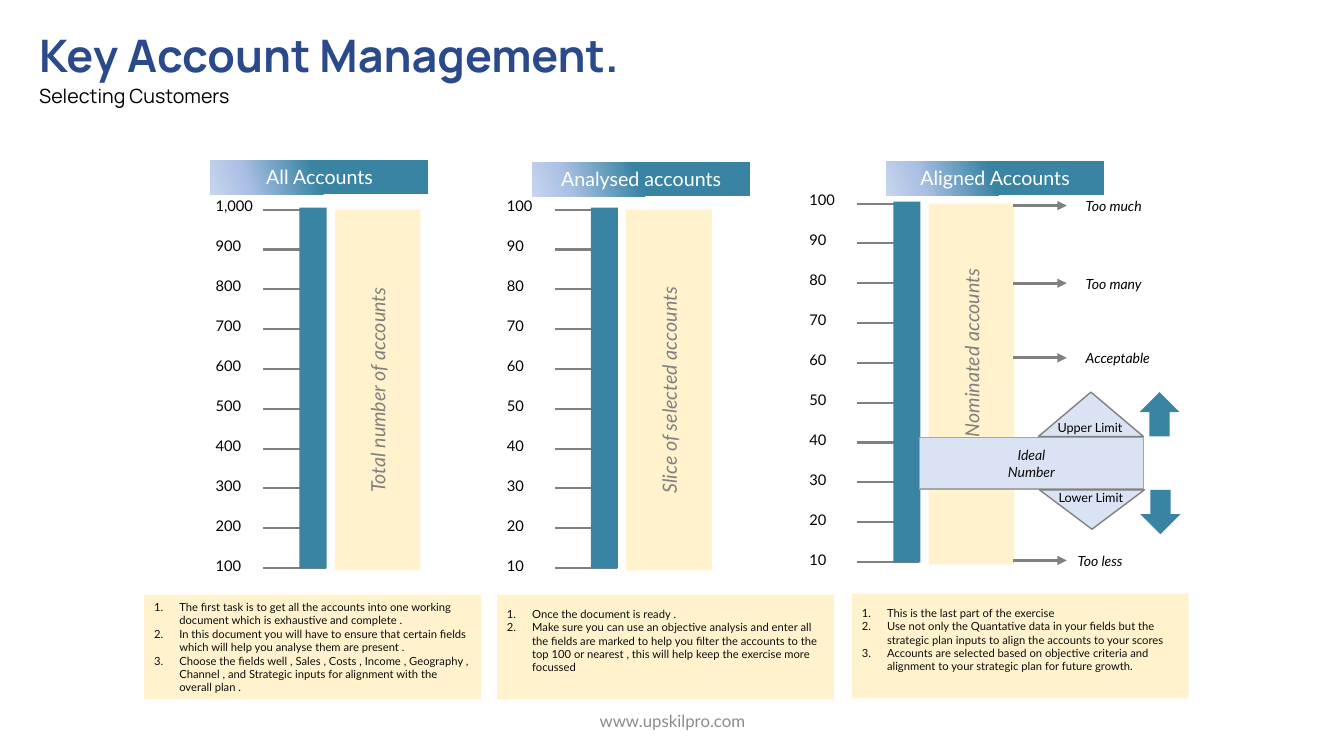
from dataclasses import dataclass

from lxml import etree
from pptx import Presentation
from pptx.dml.color import RGBColor
from pptx.enum.shapes import MSO_CONNECTOR, MSO_SHAPE
from pptx.enum.text import MSO_ANCHOR, PP_ALIGN
from pptx.oxml.ns import qn
from pptx.util import Inches, Pt

LINE = MSO_CONNECTOR.STRAIGHT
RECT, PEAK, RISE = MSO_SHAPE.RECTANGLE, MSO_SHAPE.ISOSCELES_TRIANGLE, MSO_SHAPE.UP_ARROW
TOP, MIDDLE = MSO_ANCHOR.TOP, MSO_ANCHOR.MIDDLE
LEFT, CENTER = PP_ALIGN.LEFT, PP_ALIGN.CENTER


@dataclass(frozen=True)
class Theme:
    face: str = "Lato"
    display: str = "Manrope"
    navy: str = "2A4A8B"
    teal: str = "3984A3"
    cream: str = "FFF2CC"
    pale: str = "DAE3F3"
    gray: str = "808080"
    edge: str = "A6A6A6"
    foot: str = "8C8C8C"
    ink: str = "0D0D0D"
    black: str = "000000"
    white: str = "FFFFFF"
    fade: tuple = ((0, "3984A3"), (51, "3984A3"), (83, "ABC0E4"), (100, "C7D5ED"))
    title: float = 32
    head: float = 14
    site: float = 12
    mark: float = 10.5
    note: float = 10
    limit: float = 9
    step: float = 8


T = Theme()


def style(para, size, color, face=T.face, bold=False, italic=False):
    font = para.font
    font.size, font.name = Pt(size), face
    font.bold, font.italic = bold, italic
    font.color.rgb = RGBColor.from_string(color)


def write(shape, lines, size, color, align=LEFT, anchor=TOP, italic=False):
    frame = shape.text_frame
    frame.word_wrap = True
    frame.vertical_anchor = anchor
    frame.text = "\n".join(lines)
    for para in frame.paragraphs:
        para.alignment = align
        style(para, size, color, italic=italic)
    return frame


def label(shapes, box, text, size, color=T.black, **look):
    area = shapes.add_textbox(*map(Inches, box))
    return write(area, [text], size, color, **look)


def block(shapes, kind, box, fill, line=None):
    shape = shapes.add_shape(kind, *map(Inches, box))
    shape.shadow.inherit = False
    shape.fill.solid()
    shape.fill.fore_color.rgb = RGBColor.from_string(fill)
    if line:
        shape.line.color.rgb = RGBColor.from_string(line)
        shape.line.width = Pt(1)
    else:
        shape.line.fill.background()
    return shape


def rule(shapes, x, y, length, width, arrow=False):
    line = shapes.add_connector(LINE, Inches(x), Inches(y), Inches(x + length), Inches(y))
    line.line.color.rgb = RGBColor.from_string(T.gray)
    line.line.width = Pt(width)
    if arrow:
        etree.SubElement(line.line._get_or_add_ln(), qn("a:tailEnd"), type="triangle")
    etree.SubElement(line._element.spPr, qn("a:effectLst"))


def banner(shapes, x, y, text):
    shape = block(shapes, RECT, (x, y, 2.16, 0.34), T.teal)
    shape.fill.gradient()
    shape.fill.gradient_angle = 200
    stops = shape._element.spPr.find(".//" + qn("a:gsLst"))
    for old in list(stops):
        stops.remove(old)
    for place, color in T.fade:
        stop = etree.SubElement(stops, qn("a:gs"), pos=str(place * 1000))
        etree.SubElement(stop, qn("a:srgbClr"), val=color)
    write(shape, [text], T.head, T.white, CENTER)


def gauge(shapes, x, y, marks, text, indent=0):
    """Scale of ten marks beside a bar and a captioned column."""
    for row, mark in enumerate(marks):
        rule(shapes, x + 0.57, y + 0.02 + row * 0.395, 0.62, 1.5)
        label(shapes, (x, y - 0.16 + row * 0.397, 0.85, 0.29), mark, T.mark)
    column = block(shapes, RECT, (x + 1.28, y + 0.02, 0.85, 3.58), T.cream)
    frame = write(column, [text], T.head, T.gray, CENTER, MIDDLE, True)
    frame._txBody.bodyPr.set("vert", "vert270")
    frame.paragraphs[0]._p.get_or_add_pPr().set("marL", str(Inches(indent)))
    block(shapes, RECT, (x + 0.93, y, 0.27, 3.58), T.teal)


def verdicts(shapes, x, y):
    rows = (("Too much", 0, 0.62), ("Too many", 0.77, 0.62),
            ("Acceptable", 1.51, 0.62), ("Too less", 3.52, 0.54))
    for text, drop, shift in rows:
        rule(shapes, x, y + drop, 0.53, 2.25, True)
        label(shapes, (x + shift, y + drop - 0.13, 1.12, 0.27), text, T.note, italic=True)


def target(shapes, x, y):
    """Ideal band with its upper and lower limits."""
    band = block(shapes, RECT, (x, y, 2.22, 0.51), T.pale, T.edge)
    write(band, ["Ideal", "Number"], T.note, T.ink, CENTER, MIDDLE, True)
    limits = (("Upper Limit", -0.45, 0.44, -0.22, 0, 1.18),
              ("Lower Limit", 0.52, 0.39, 0.47, 180, 1.19))
    for text, top, tall, drop, turn, shift in limits:
        peak = block(shapes, PEAK, (x + shift, y + top, 1.04, tall), T.pale, T.gray)
        arrow = block(shapes, RISE, (x + shift + 1, y + top, 0.4, 0.44), T.teal)
        peak.rotation = arrow.rotation = turn
        label(shapes, (x + shift + 0.09, y + drop, 0.85, 0.25), text, T.limit)


def steps(shapes, x, y, lines, below):
    shape = block(shapes, RECT, (x, y, 3.34, 1.04), T.cream)
    frame = write(shape, lines, T.step, T.ink, anchor=MIDDLE)
    frame.margin_bottom = Inches(below)
    for para in frame.paragraphs:
        props = para._p.get_or_add_pPr()
        props.set("marL", str(Inches(0.25)))
        props.set("indent", str(Inches(-0.25)))
        number = props.makeelement(qn("a:buAutoNum"), {"type": "arabicPeriod"})
        props.insert(0, number)


def heading(shapes, x, y):
    area = shapes.add_textbox(Inches(x), Inches(y), Inches(9.32), Inches(0.88))
    frame = write(area, ["Key Account Management.", "Selecting Customers"], T.head, T.black)
    first, second = frame.paragraphs
    style(first, T.title, T.navy, T.display, bold=True)
    style(second, T.head, T.black, T.display)
    second.line_spacing = 1.07
    second.space_after = Pt(8)


def main():
    deck = Presentation()
    deck.slide_width, deck.slide_height = Inches(13.33), Inches(7.5)
    shapes = deck.slides.add_slide(deck.slide_layouts[6]).shapes

    tens = [str(n) for n in range(100, 0, -10)]
    hundreds = [f"{n:,}" for n in range(1000, 0, -100)]
    gauges = ((2.04, 2.06, hundreds, "Total number of accounts", 0),
              (4.93, 2.06, tens, "Slice of selected accounts", 0),
              (7.93, 2, tens, "Nominated accounts", 0.62))
    for spot in gauges:
        group = shapes.add_group_shape().shapes
        gauge(group, *spot)
    verdicts(group, 10.05, 2.04)
    target(group, 9.12, 4.34)

    banner(shapes, 2.09, 1.59, "All Accounts")
    banner(shapes, 5.28, 1.61, "Analysed accounts")
    banner(shapes, 8.79, 1.6, "Aligned Accounts")
    heading(shapes, 0.29, 0.23)
    label(shapes, (4.42, 6.95, 4.5, 0.4), "www.upskilpro.com", T.site, T.foot,
          align=CENTER, anchor=MIDDLE)

    steps(shapes, 1.43, 5.9, [
        "The first task is to get all the accounts into one working document which is exhaustive and complete .",
        "In this document you will have to ensure that certain fields which will help you analyse them are present .",
        "Choose the fields well , Sales , Costs , Income , Geography , Channel , and Strategic inputs "
        "for alignment with the overall plan ."], 0.05)
    steps(shapes, 4.93, 5.9, [
        "Once the document is ready .",
        "Make sure you can use an objective analysis and enter all the fields are marked to help you filter "
        "the accounts to the top 100 or nearest , this will help keep the exercise more focussed"], 0.18)
    steps(shapes, 8.45, 5.89, [
        "This is the last part of the exercise",
        "Use not only the Quantative data in your fields but the strategic plan inputs "
        "to align the accounts to your scores",
        "Accounts are selected based on objective criteria and alignment to your strategic plan "
        "for future growth."], 0.18)
    deck.save("out.pptx")


if __name__ == "__main__":
    main()
